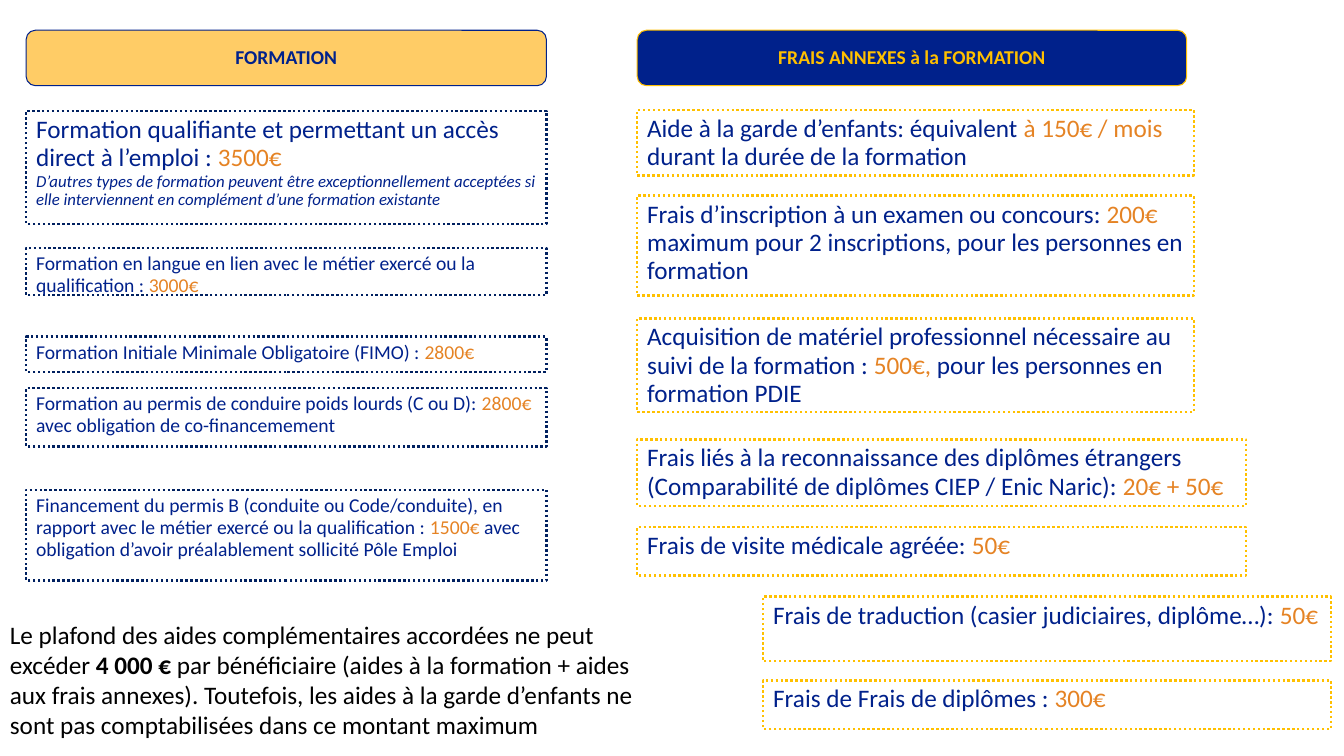
from dataclasses import dataclass

from pptx import Presentation
from pptx import util as u
from pptx.dml.color import RGBColor
from pptx.enum import dml, shapes, text

PX = 9144
COLORS = {
    "navy": "00218B",
    "dark": "002060",
    "gold": "FFC000",
    "sand": "FFCC66",
    "orange": "E58324",
    "black": "000000",
}
LEFT, RIGHT, INDENTED = 26, 632, 757
LEFT_WIDTH = 516


@dataclass
class Span:
    words: str
    color: str = "navy"
    bold: bool = False
    italic: bool = False
    size: int | None = None


@dataclass
class Header:
    left: int
    width: int
    words: str
    fill: str
    ink: str


@dataclass
class Aid:
    left: int
    top: int
    width: int
    height: int
    line: str
    size: int
    paras: list[list[Span]]


def amount(words: str) -> Span:
    return Span(words, "orange")


def training(top: int, height: int, *paras: list[Span], size: int = 14) -> Aid:
    return Aid(LEFT, top, LEFT_WIDTH, height, "dark", size, list(paras))


def expense(left: int, top: int, width: int, height: int, *spans: Span) -> Aid:
    return Aid(left, top, width, height, "gold", 18, [list(spans)])


HEADERS = [
    Header(LEFT, LEFT_WIDTH, "FORMATION", "sand", "navy"),
    Header(RIGHT, 545, "FRAIS ANNEXES à la FORMATION", "navy", "gold"),
]

AIDS = [
    training(
        110, 112,
        [Span("Formation qualifiante et permettant un accès direct à l’emploi : "),
         amount("3500€")],
        [Span("D’autres types de formation peuvent être exceptionnellement acceptées "
              "si elle interviennent en complément d’une formation existante",
              italic=True, size=12)],
        size=18,
    ),
    training(246, 47, [
        Span("Formation en langue en lien avec le métier exercé ou la qualification : "),
        amount("3000€"),
    ]),
    training(334, 35, [
        Span("Formation Initiale Minimale Obligatoire (FIMO) : "),
        amount("2800€"),
    ]),
    training(385, 58, [
        Span("Formation au permis de conduire poids lourds (C ou D): "),
        amount("2800€ "),
        Span("avec obligation de co-financemement"),
    ]),
    training(486, 90, [
        Span("Financement du permis B (conduite ou Code/conduite), en rapport avec "
             "le métier exercé ou la qualification : "),
        amount("1500€ "),
        Span("avec obligation d’avoir préalablement sollicité Pôle Emploi"),
    ]),
    expense(RIGHT, 109, 552, 65,
            Span("Aide à la garde d’enfants: équivalent "),
            amount("à 150€ / mois "),
            Span("durant la durée de la formation")),
    expense(RIGHT, 194, 552, 99,
            Span("Frais d’inscription à un examen ou concours: "),
            amount("200€ "),
            Span("maximum pour 2 inscriptions, pour les personnes en formation")),
    expense(RIGHT, 316, 552, 93,
            Span("Acquisition de matériel professionnel nécessaire au suivi de la formation : "),
            amount("500€, "),
            Span("pour les personnes en formation PDIE")),
    expense(RIGHT, 436, 604, 66,
            Span("Frais liés à la reconnaissance des diplômes étrangers "
                 "(Comparabilité de diplômes CIEP / Enic Naric): "),
            amount("20€ + 50€")),
    expense(RIGHT, 523, 604, 48,
            Span("Frais de visite médicale agréée: "), amount("50€")),
    expense(INDENTED, 592, 563, 64,
            Span("Frais de traduction (casier judiciaires, diplôme…): "), amount("50€")),
    expense(INDENTED, 675, 563, 48,
            Span("Frais de Frais de diplômes : "), amount("300€")),
]

CEILING = [
    Span("Le plafond des aides complémentaires accordées ne peut excéder ", "black"),
    Span("4 000 €", "black", bold=True),
    Span(" par bénéficiaire (aides à la formation + aides aux frais annexes). "
         "Toutefois, les aides à la garde d’enfants ne sont pas comptabilisées "
         "dans ce montant maximum", "black"),
]


def rgb(name: str) -> RGBColor:
    return RGBColor.from_string(COLORS[name])


def apply(target: object, values: dict[str, object]) -> None:
    for name, value in values.items():
        setattr(target, name, value)


def write(box, paras: list[list[Span]], size: int, para_format: dict, frame_format: dict) -> None:
    frame = box.text_frame
    apply(frame, {"word_wrap": True, **frame_format})
    for index, spans in enumerate(paras):
        para = frame.add_paragraph() if index else frame.paragraphs[0]
        apply(para, para_format)
        for span in spans:
            run = para.add_run()
            run.text = span.words
            apply(run.font, {
                "name": "Calibri",
                "size": u.Pt(span.size or size),
                "bold": span.bold,
                "italic": span.italic,
            })
            run.font.color.rgb = rgb(span.color)


def add_box(page, kind, bounds: tuple[int, ...], line: str, weight: float):
    box = page.shapes.add_shape(kind, *(value * PX for value in bounds))
    box.shadow.inherit = False
    box.line.color.rgb = rgb(line)
    box.line.width = u.Pt(weight)
    return box


def draw_header(page, header: Header) -> None:
    line = "navy" if header.fill == "sand" else "gold"
    box = add_box(page, shapes.MSO_SHAPE.ROUNDED_RECTANGLE,
                  (header.left, 30, header.width, 55), line, 0.75)
    box.fill.solid()
    box.fill.fore_color.rgb = rgb(header.fill)
    write(box, [[Span(header.words, header.ink, bold=True)]], 14,
          {"alignment": text.PP_ALIGN.CENTER, "line_spacing": 0.93},
          {"vertical_anchor": text.MSO_ANCHOR.MIDDLE})


def draw_aid(page, aid: Aid) -> None:
    box = add_box(page, shapes.MSO_SHAPE.RECTANGLE,
                  (aid.left, aid.top, aid.width, aid.height), aid.line, 1.75)
    box.line.dash_style = dml.MSO_LINE.ROUND_DOT
    box.fill.background()
    write(box, aid.paras, aid.size,
          {"alignment": text.PP_ALIGN.LEFT, "line_spacing": 0.93},
          {"vertical_anchor": text.MSO_ANCHOR.TOP})


def main() -> None:
    deck = Presentation()
    apply(deck, {"slide_width": 1333 * PX, "slide_height": 750 * PX})
    page = deck.slides.add_slide(deck.slide_layouts.get_by_name("Blank"))
    for header in HEADERS:
        draw_header(page, header)
    for aid in AIDS:
        draw_aid(page, aid)
    ceiling = page.shapes.add_textbox(0, 609 * PX, 667 * PX, 131 * PX)
    write(ceiling, [CEILING], 18, {"alignment": text.PP_ALIGN.LEFT},
          {"auto_size": text.MSO_AUTO_SIZE.SHAPE_TO_FIT_TEXT})
    deck.save("out.pptx")


if __name__ == "__main__":
    main()
